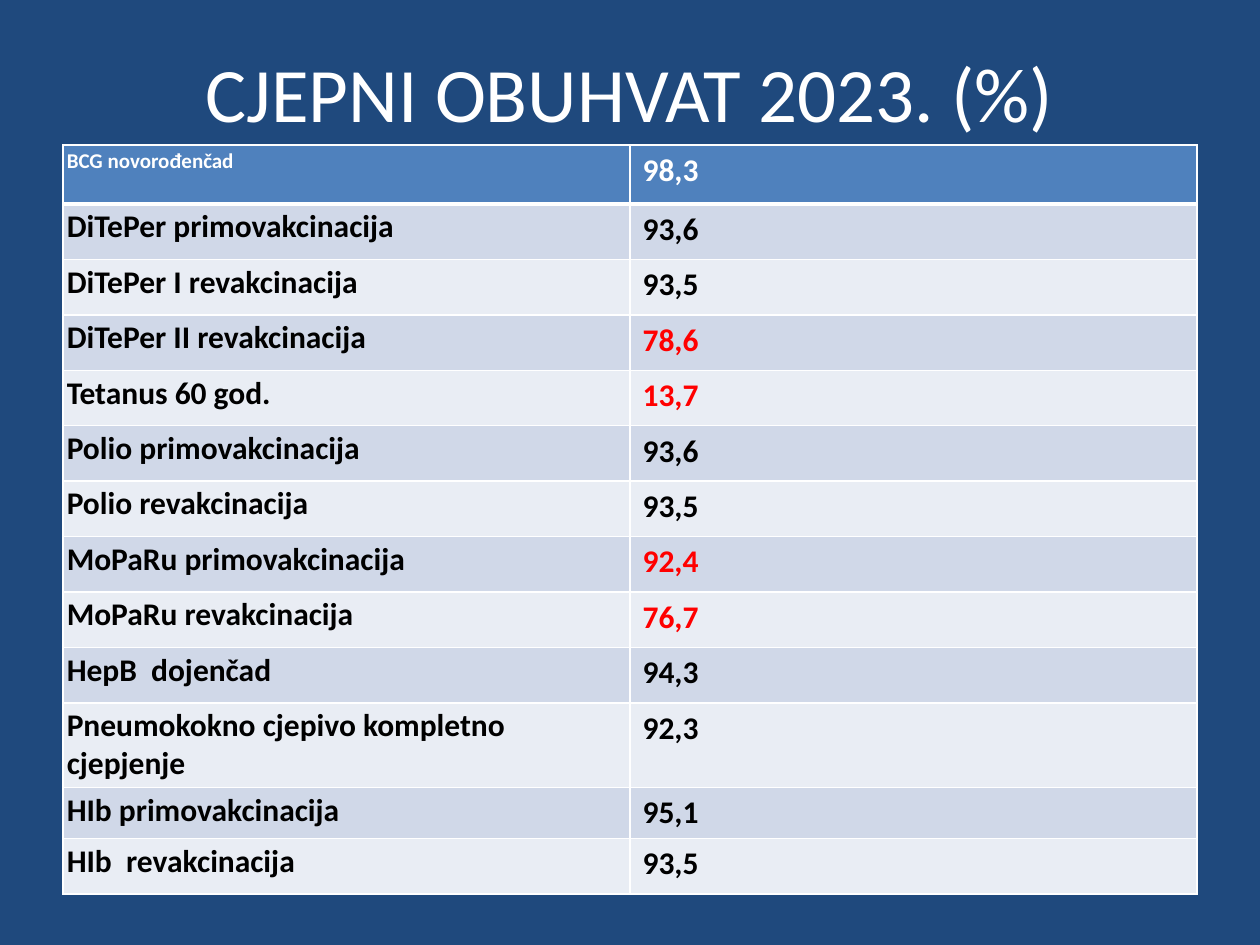
import pptx
import pptx.dml.color
import pptx.enum.text
import pptx.oxml
import pptx.oxml.ns
import pptx.util
from pptx.util import Inches

TITLE = "CJEPNI OBUHVAT 2023. (%)"
# vaccine, coverage, below target
COVERAGE = [
    ("BCG novorođenčad", "98,3", False),
    ("DiTePer primovakcinacija", "93,6", False),
    ("DiTePer I revakcinacija", "93,5", False),
    ("DiTePer II revakcinacija", "78,6", True),
    ("Tetanus 60 god.", "13,7", True),
    ("Polio primovakcinacija", "93,6", False),
    ("Polio revakcinacija", "93,5", False),
    ("MoPaRu primovakcinacija", "92,4", True),
    ("MoPaRu revakcinacija", "76,7", True),
    ("HepB  dojenčad", "94,3", False),
    ("Pneumokokno cjepivo kompletno cjepjenje", "92,3", False),
    ("HIb primovakcinacija", "95,1", False),
    ("HIb  revakcinacija", "93,5", False),
]
ROW_HEIGHT = 0.44
SPECIAL_HEIGHTS = {0: 0.47, 10: 0.43, 11: 0.38}
LABEL_INSET = 0.03
COLORS = {
    "background": "1F497D", "header": "4F81BD", "odd": "D0D8E8", "even": "E9EDF4",
    "white": "FFFFFF", "black": "000000", "low": "FF0000",
}


def rgb(name):
    return pptx.dml.color.RGBColor.from_string(COLORS[name])


def write(tf, text, size=18, color="black", bold=False, align=None):
    p = tf.paragraphs[0]
    p.alignment = align
    r = p.add_run()
    r.text = text
    r.font.name = "Calibri"
    r.font.size = pptx.util.Pt(size)
    r.font.bold = bold
    r.font.color.rgb = rgb(color)


def set_borders(cell, top=1, bottom=1):
    """Add white cell borders; call before filling, as the schema puts lines first."""
    tc_pr = cell._tc.get_or_add_tcPr()
    for side, width in (("L", 1), ("R", 1), ("T", top), ("B", bottom)):
        tc_pr.append(pptx.oxml.parse_xml(
            f'<a:ln{side} {pptx.oxml.ns.nsdecls("a")} w="{pptx.util.Pt(width)}">'
            f'<a:solidFill><a:srgbClr val="{COLORS["white"]}"/></a:solidFill>'
            f'</a:ln{side}>'))


def add_coverage_table(slide):
    heights = [SPECIAL_HEIGHTS.get(i, ROW_HEIGHT) for i in range(len(COVERAGE))]
    table = slide.shapes.add_table(
        len(COVERAGE), 2, Inches(0.5), Inches(1.15), Inches(9), Inches(sum(heights))).table
    for i, (label, value, low) in enumerate(COVERAGE):
        table.rows[i].height = Inches(heights[i])
        header = i == 0
        fill = "header" if header else "odd" if i % 2 else "even"
        color = "white" if header else "black"
        label_cell, value_cell = table.cell(i, 0), table.cell(i, 1)
        for cell in (label_cell, value_cell):
            set_borders(cell, top=3 if i == 1 else 1, bottom=3 if header else 1)
            cell.fill.solid()
            cell.fill.fore_color.rgb = rgb(fill)
        label_cell.margin_left = label_cell.margin_right = Inches(LABEL_INSET)
        label_cell.margin_top = label_cell.margin_bottom = Inches(LABEL_INSET)
        write(label_cell.text_frame, label, size=12 if header else 18, color=color, bold=True)
        write(value_cell.text_frame, value, color="low" if low else color, bold=True)


def main():
    prs = pptx.Presentation()
    prs.slide_width, prs.slide_height = Inches(10), Inches(7.5)
    s = prs.slides.add_slide(prs.slide_layouts[5])
    s.background.fill.solid()
    s.background.fill.fore_color.rgb = rgb("background")

    title = s.shapes.title
    title.left, title.top = Inches(0.5), Inches(0.3)
    title.width, title.height = Inches(9), Inches(0.85)
    title.text_frame.vertical_anchor = pptx.enum.text.MSO_ANCHOR.MIDDLE
    write(title.text_frame, TITLE, size=44, color="white",
          align=pptx.enum.text.PP_ALIGN.CENTER)

    add_coverage_table(s)
    prs.save("out.pptx")


if __name__ == "__main__":
    main()
